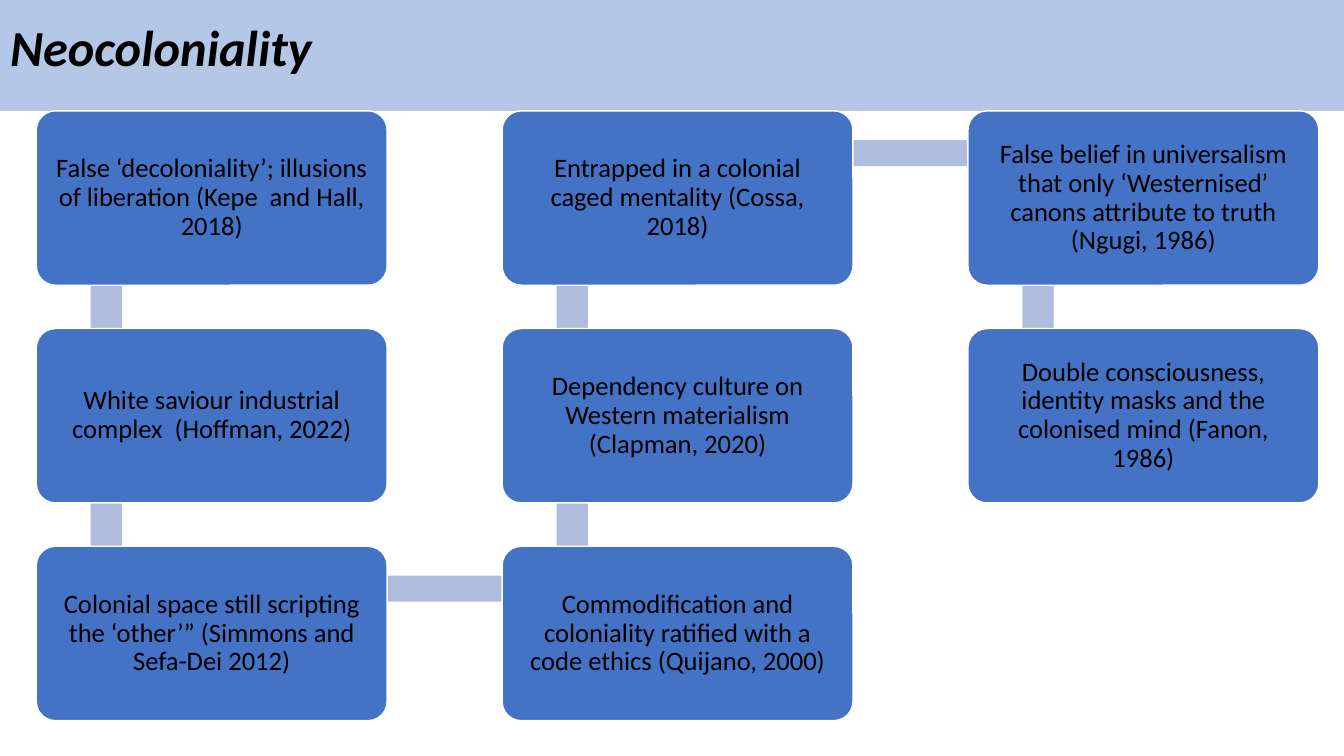
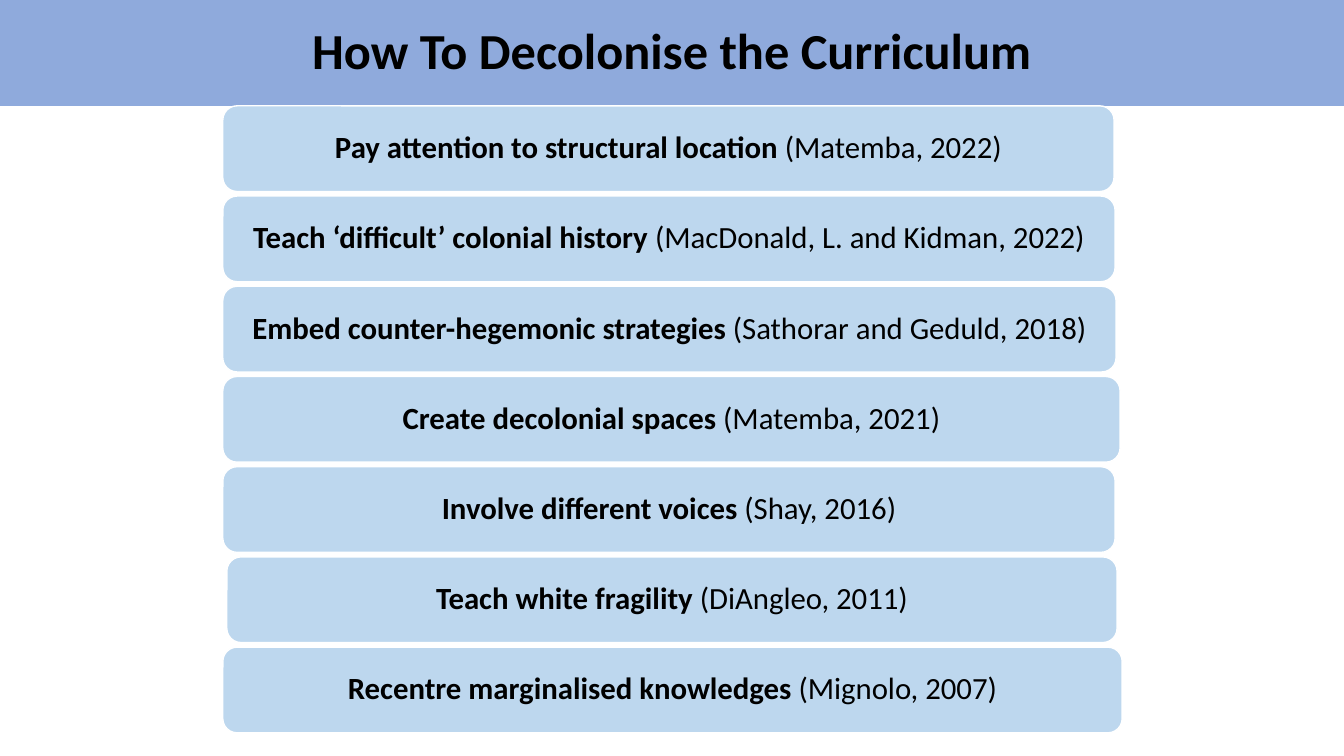
"""Build two slides on neocoloniality and decolonising the curriculum."""
from dataclasses import dataclass

from pptx import Presentation
from pptx.dml.color import RGBColor
from pptx.enum.shapes import MSO_SHAPE
from pptx.enum.text import MSO_ANCHOR, MSO_AUTO_SIZE, PP_ALIGN
from pptx.util import Inches, Pt


@dataclass(frozen=True)
class Theme:
    font: str = "Calibri"
    text: RGBColor = RGBColor.from_string("000000")
    outline: RGBColor = RGBColor.from_string("FFFFFF")
    pale_band: RGBColor = RGBColor.from_string("B4C7E7")
    deep_band: RGBColor = RGBColor.from_string("8FAADC")
    box: RGBColor = RGBColor.from_string("4472C4")
    bar: RGBColor = RGBColor.from_string("B0BCDE")
    step: RGBColor = RGBColor.from_string("BDD7EE")
    title_size: Pt = Pt(36)
    box_size: Pt = Pt(19)
    step_size: Pt = Pt(22)


theme = Theme()


def add_block(s, preset, x, y, w, h, fill, outline=None):
    sp = s.shapes.add_shape(preset, Inches(x), Inches(y), Inches(w), Inches(h))
    sp.shadow.inherit = False
    sp.fill.solid()
    sp.fill.fore_color.rgb = fill
    if outline is None:
        sp.line.fill.background()
    else:
        sp.line.color.rgb = outline
        sp.line.width = Pt(1)
    return sp


def set_text(sp, runs, size, align, insets):
    tf = sp.text_frame
    frame = {"word_wrap": True, "auto_size": MSO_AUTO_SIZE.NONE,
             "vertical_anchor": MSO_ANCHOR.MIDDLE}
    sides = ("margin_left", "margin_top", "margin_right", "margin_bottom")
    frame.update(zip(sides, map(Inches, insets)))
    for name, value in frame.items():
        setattr(tf, name, value)
    p = tf.paragraphs[0]
    p.alignment = align
    p.line_spacing = 0.9
    for text, style in runs:
        r = p.add_run()
        r.text = text
        for name, value in {"name": theme.font, "size": size, **style}.items():
            setattr(r.font, name, value)
        r.font.color.rgb = theme.text


prs = Presentation()
prs.slide_width = Inches(13.33)
prs.slide_height = Inches(7.5)

titles = [
    ("Neocoloniality", -0.02, 1.12, theme.pale_band, PP_ALIGN.LEFT,
     {"bold": True, "italic": True}, (0.1, 0.05, 0.1, 0.13)),
    ("How To Decolonise the Curriculum", 0, 1.05, theme.deep_band, PP_ALIGN.CENTER,
     {"bold": True}, (0.1, 0.05, 0.1, 0.05)),
]
slides = []
for text, top, height, band, align, style, insets in titles:
    s = prs.slides.add_slide(prs.slide_layouts[5])
    title = s.shapes.title
    place = {"left": 0, "top": Inches(top),
             "width": prs.slide_width, "height": Inches(height)}
    for name, value in place.items():
        setattr(title, name, value)
    title.fill.solid()
    title.fill.fore_color.rgb = band
    set_text(title, [(text, style)], theme.title_size, align, insets)
    slides.append(s)
snake_slide, steps_slide = slides

ideas = [
    "False ‘decoloniality’; illusions of liberation (Kepe  and Hall, 2018)",
    "White saviour industrial complex  (Hoffman, 2022)",
    "Colonial space still scripting the ‘other’” (Simmons and Sefa-Dei 2012)",
    "Commodification and coloniality ratified with a code ethics (Quijano, 2000)",
    "Dependency culture on Western materialism (Clapman, 2020)",
    "Entrapped in a colonial caged mentality (Cossa, 2018)",
    "False belief in universalism that only ‘Westernised’ canons attribute to truth (Ngugi, 1986)",
    "Double consciousness, identity masks and the colonised mind (Fanon, 1986)",
]
rows, box_w, box_h, col_step, row_step = 3, 3.48, 1.73, 4.62, 2.16
corners = []
for i in range(len(ideas)):
    col, row = divmod(i, rows)
    if col % 2:
        row = rows - 1 - row
    corners.append((0.36 + col * col_step, 1.1 + row * row_step))

for (x, y), (next_x, next_y) in zip(corners, corners[1:]):
    if x == next_x:
        bar = (x + 0.54, min(y, next_y) + 0.41, 0.31, row_step)
    else:
        bar = (x + 0.71, y + 0.29, col_step, 0.26)
    add_block(snake_slide, MSO_SHAPE.RECTANGLE, *bar, theme.bar)

for (x, y), idea in zip(corners, ideas):
    sp = add_block(snake_slide, MSO_SHAPE.ROUNDED_RECTANGLE, x, y, box_w, box_h,
                   theme.box, theme.outline)
    sp.adjustments[0] = 0.11
    set_text(sp, [(idea, {})], theme.box_size, PP_ALIGN.CENTER, (0.13,) * 4)

steps = [
    ("Pay attention to structural location ", "(Matemba, 2022)", 2.21, 8.84),
    ("Teach ‘difficult’ colonial history ", "(MacDonald, L. and Kidman, 2022)", 2.21, 8.85),
    ("Embed counter-hegemonic strategies ", "(Sathorar and Geduld, 2018)", 2.21, 8.86),
    ("Create decolonial spaces ", "(Matemba, 2021)", 2.21, 8.9),
    ("Involve different voices ", "(Shay, 2016)", 2.21, 8.85),
    ("Teach white fragility ", "(DiAngleo, 2011)", 2.25, 8.83),
    ("Recentre marginalised knowledges ", "(Mignolo, 2007)", 2.21, 8.92),
]
step_h, step_gap = 0.85, 0.045
for i, (action, citation, x, w) in enumerate(steps):
    sp = add_block(steps_slide, MSO_SHAPE.ROUNDED_RECTANGLE, x,
                   1.05 + i * (step_h + step_gap), w, step_h, theme.step, theme.outline)
    runs = [(action, {"bold": True}), (citation, {"bold": False})]
    set_text(sp, runs, theme.step_size, PP_ALIGN.CENTER, (0.09, 0.05, 0.09, 0.05))

prs.save("out.pptx")
